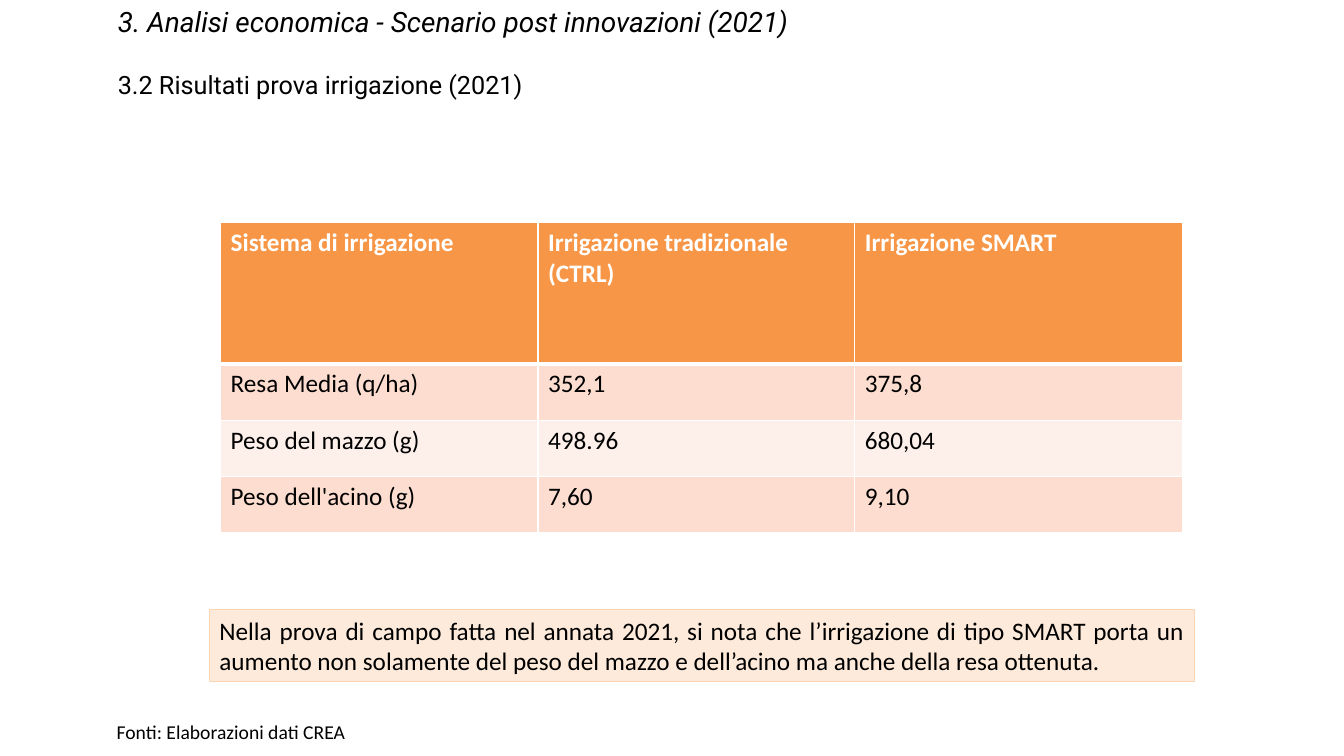
from dataclasses import dataclass

from lxml import etree
from pptx import Presentation
from pptx.dml.color import RGBColor
from pptx.enum.shapes import MSO_SHAPE
from pptx.enum.text import PP_ALIGN
from pptx.oxml.ns import qn
from pptx.util import Cm, Pt

RECT = MSO_SHAPE.RECTANGLE
LEFT, JUSTIFY = PP_ALIGN.LEFT, PP_ALIGN.JUSTIFY


@dataclass(frozen=True)
class Theme:
    heading_font: str = "Roboto"
    body_font: str = "Calibri"
    title_size: int = 20
    body_size: int = 18
    source_size: int = 14
    black: str = "000000"
    white: str = "FFFFFF"
    header_fill: str = "F79646"
    band_fills: tuple = ("FCDDCF", "FDEFE9")
    note_fill: str = "FDEADA"
    note_line: str = "FCD5B5"


def rgb(color):
    return RGBColor.from_string(color)


def write(p, text, *, font, size, color, bold=False, italic=False,
          align=LEFT, indent=0, before=0):
    """Put one formatted run into a paragraph."""
    p.alignment = align
    if indent:
        pPr = p._p.get_or_add_pPr()
        pPr.set("marL", str(Cm(indent)))
        pPr.set("indent", "0")
    if before:
        p.space_before = Pt(before)
    r = p.add_run()
    r.text = text
    r.font.name = font
    r.font.size = Pt(size)
    r.font.bold = bold
    r.font.italic = italic
    r.font.color.rgb = rgb(color)


def set_borders(cell, color, bottom):
    """Draw thin cell borders, with a chosen bottom width in points."""
    tcPr = cell._tc.get_or_add_tcPr()
    for side, width in (("L", 1), ("R", 1), ("T", 1), ("B", bottom)):
        ln = etree.SubElement(tcPr, qn(f"a:ln{side}"), w=str(Pt(width)))
        fill = etree.SubElement(ln, qn("a:solidFill"))
        etree.SubElement(fill, qn("a:srgbClr"), val=color)


class SlideBuilder:
    def __init__(self, s, theme):
        self.s = s
        self.theme = theme

    def text(self, box, paragraphs):
        sp = self.s.shapes.add_textbox(*map(Cm, box))
        tf = sp.text_frame
        tf.word_wrap = True
        for i, (text, style) in enumerate(paragraphs):
            p = tf.add_paragraph() if i else tf.paragraphs[0]
            write(p, text, **style)

    def note(self, box, text):
        t = self.theme
        sp = self.s.shapes.add_shape(RECT, *map(Cm, box))
        sp.shadow.inherit = False
        sp.fill.solid()
        sp.fill.fore_color.rgb = rgb(t.note_fill)
        sp.line.color.rgb = rgb(t.note_line)
        sp.line.width = Pt(0.75)
        sp.text_frame.word_wrap = True
        write(sp.text_frame.paragraphs[0], text, font=t.body_font,
              size=t.body_size, color=t.black, align=JUSTIFY)

    def table(self, left, top, widths, heights, rows):
        t = self.theme
        table = self.s.shapes.add_table(
            len(rows), len(widths), Cm(left), Cm(top),
            Cm(sum(widths)), Cm(sum(heights))).table
        for col, width in zip(table.columns, widths):
            col.width = Cm(width)
        for i, (row, height) in enumerate(zip(rows, heights)):
            table.rows[i].height = Cm(height)
            header = i == 0
            fill = t.header_fill if header else t.band_fills[(i - 1) % 2]
            for j, text in enumerate(row):
                cell = table.cell(i, j)
                set_borders(cell, t.white, 3 if header else 1)
                cell.fill.solid()
                cell.fill.fore_color.rgb = rgb(fill)
                write(cell.text_frame.paragraphs[0], text, font=t.body_font,
                      size=t.body_size, bold=header,
                      color=t.white if header else t.black)


def main():
    prs = Presentation()
    prs.slide_width, prs.slide_height = Cm(33.87), Cm(19.05)
    theme = Theme()
    slide = SlideBuilder(prs.slides.add_slide(prs.slide_layouts[6]), theme)

    # Section heading and subheading
    heading = dict(font=theme.heading_font, color=theme.black,
                   align=JUSTIFY, indent=1.27)
    slide.text((1.45, 0, 22.81, 2.64), [
        ("3. Analisi economica - Scenario post innovazioni (2021)",
         dict(heading, size=theme.title_size, italic=True)),
        ("3.2 Risultati prova irrigazione (2021)",
         dict(heading, size=theme.body_size, before=22)),
    ])

    # Irrigation results
    slide.table(5.56, 5.61, (8, 7.98, 8.26), (3.56, 1.42, 1.42, 1.42), [
        ("Sistema di irrigazione", "Irrigazione tradizionale (CTRL)",
         "Irrigazione SMART"),
        ("Resa Media (q/ha)", "352,1", "375,8"),
        ("Peso del mazzo (g)", "498.96", "680,04"),
        ("Peso dell'acino (g)", "7,60", "9,10"),
    ])

    # Comment on the results
    slide.note((5.28, 15.37, 24.82, 1.8),
               "Nella prova di campo fatta nel annata 2021, si nota che "
               "l’irrigazione di tipo SMART porta un aumento non solamente "
               "del peso del mazzo e dell’acino ma anche della resa ottenuta.")

    # Data source
    slide.text((2.69, 18.01, 12.73, 0.86), [
        ("Fonti: Elaborazioni dati CREA",
         dict(font=theme.body_font, size=theme.source_size,
              color=theme.black)),
    ])

    prs.save("out.pptx")


if __name__ == "__main__":
    main()
